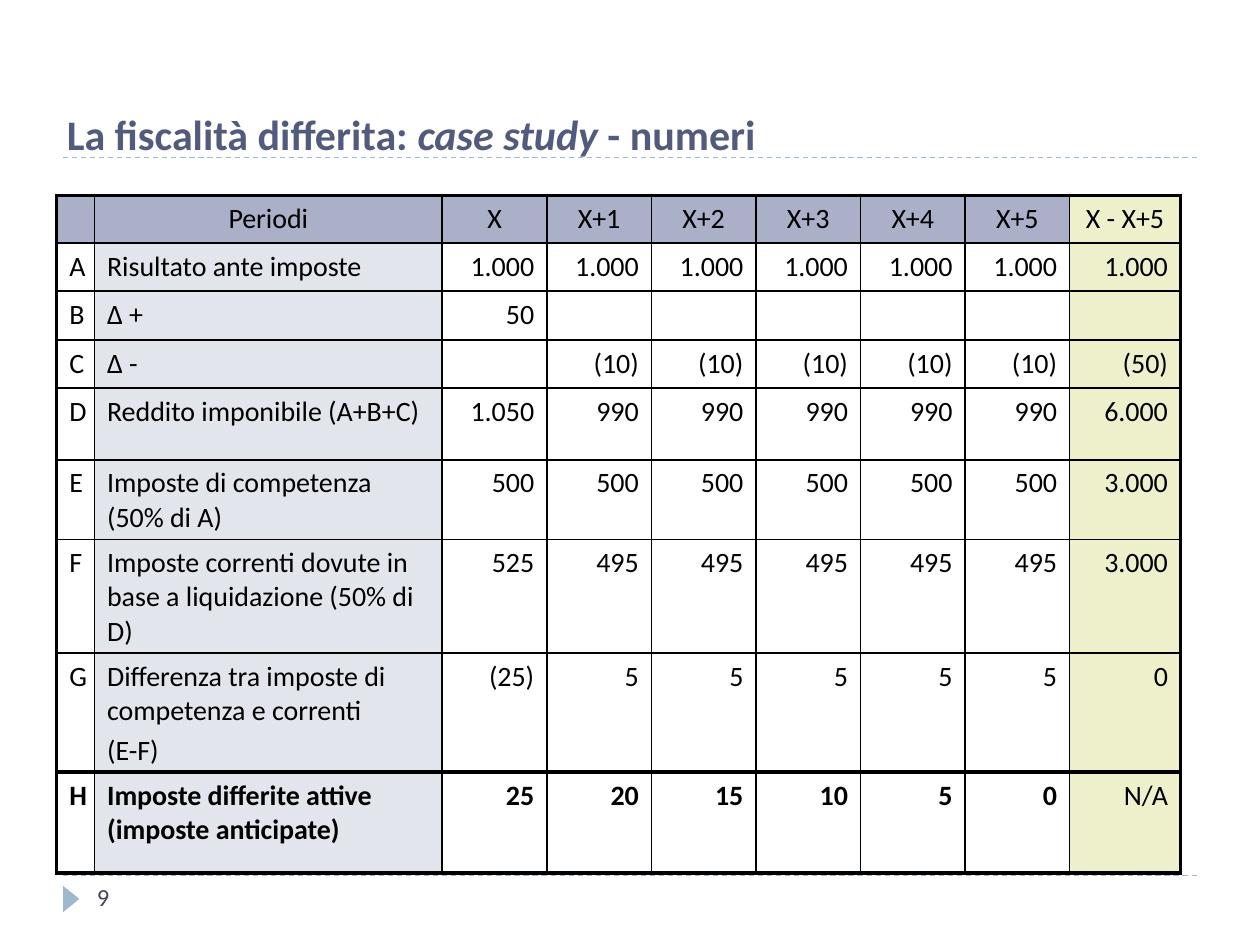
from dataclasses import dataclass
from lxml import etree
from pptx import Presentation
from pptx.dml.color import RGBColor
from pptx.enum.dml import MSO_LINE
from pptx.enum.shapes import MSO_CONNECTOR, MSO_SHAPE
from pptx.enum.text import MSO_ANCHOR, PP_ALIGN
from pptx.oxml import parse_xml
from pptx.oxml.ns import nsdecls, qn
from pptx.slide import Slide
from pptx.util import Inches, Pt

LEFT, CENTER, RIGHT = PP_ALIGN.LEFT, PP_ALIGN.CENTER, PP_ALIGN.RIGHT
TOP = MSO_ANCHOR.TOP
DASH = MSO_LINE.DASH
STRAIGHT = MSO_CONNECTOR.STRAIGHT
TRIANGLE = MSO_SHAPE.ISOSCELES_TRIANGLE
GRID_COLUMNS, GRID_ROWS = 100, 75

PERIODS = ["X"] + [f"X+{year}" for year in range(1, 6)]
ENTRIES = [
    ["", "Periodi", *PERIODS, "X - X+5"],
    ["A", "Risultato ante imposte", *["1.000"] * 7],
    ["B", "Δ +", "50", *[""] * 6],
    ["C", "Δ -", "", *["(10)"] * 5, "(50)"],
    ["D", "Reddito imponibile (A+B+C)", "1.050", *["990"] * 5, "6.000"],
    ["E", "Imposte di competenza (50% di A)", *["500"] * 6, "3.000"],
    ["F", "Imposte correnti dovute in base a liquidazione (50% di D)",
     "525", *["495"] * 5, "3.000"],
    ["G", "Differenza tra imposte di competenza e correnti\n(E-F)",
     "(25)", *["5"] * 5, "0"],
    ["H", "Imposte differite attive (imposte anticipate)",
     "25", "20", "15", "10", "5", "0", "N/A"],
]
COLUMN_WIDTHS = [3, 27.6, *[8.3] * 6, 8.8]
ROW_HEIGHTS = [3.8, 3.8, 3.9, 3.8, 5.7, 5.7, 8, 8.5, 8]


def color(hex_value):
    """Turn a hex string into a colour."""
    return RGBColor.from_string(hex_value)


def write_text(frame, paragraphs, *, font, size, ink, align=LEFT, bold=False, gap=0):
    """Fill a text frame with paragraphs, each a list of (text, italic) runs."""
    frame.word_wrap = True
    for index, runs in enumerate(paragraphs):
        paragraph = frame.add_paragraph() if index else frame.paragraphs[0]
        paragraph.alignment = align
        paragraph.space_before = Pt(gap if index else 0)
        for content, italic in runs:
            run = paragraph.add_run()
            run.text = content
            run.font.name, run.font.size = font, Pt(size)
            run.font.bold, run.font.italic = bold, italic
            run.font.color.rgb = color(ink)


def set_borders(cell, widths, ink):
    """Draw the left, right, top and bottom borders of a cell."""
    properties = cell._tc.get_or_add_tcPr()
    for side, width in zip("LRTB", widths):
        properties.append(parse_xml(
            f'<a:ln{side} {nsdecls("a")} w="{Pt(width)}"><a:solidFill>'
            f'<a:srgbClr val="{ink}"/></a:solidFill></a:ln{side}>'))


@dataclass
class Deck:
    """Hold the style and the current slide."""
    slide: Slide
    font: str = "Calibri"
    ink: str = "000000"
    title_ink: str = "525B7E"
    number_ink: str = "464653"
    accent: str = "9FB8CD"
    header_fill: str = "AAB0C8"
    label_fill: str = "E3E5ED"
    total_fill: str = "EDF0CA"
    thin: float = 1
    thick: float = 2.25

    def box(self, left, top, width, height):
        """Convert grid units to slide lengths."""
        column, row = Inches(10 / GRID_COLUMNS), Inches(7.5 / GRID_ROWS)
        return [round(n * unit) for n, unit in
                zip((left, top, width, height), (column, row, column, row))]

    def title(self, runs, *area):
        """Place and fill the title."""
        heading = self.slide.shapes.title
        heading.left, heading.top, heading.width, heading.height = self.box(*area)
        heading.text_frame.vertical_anchor = TOP
        write_text(heading.text_frame, [runs], font=self.font, size=24,
                   ink=self.title_ink, bold=True)

    def rule(self, left, right, row):
        """Draw a dashed horizontal rule."""
        x1, y, x2, _ = self.box(left, row, right, 0)
        rule = self.slide.shapes.add_connector(STRAIGHT, x1, y, x2, y)
        rule.line.color.rgb = color(self.accent)
        rule.line.width, rule.line.dash_style = Pt(0.75), DASH
        etree.SubElement(rule._element.spPr, qn("a:effectLst"))

    def marker(self, *area):
        """Draw a triangle that points right."""
        marker = self.slide.shapes.add_shape(TRIANGLE, *self.box(*area))
        marker.rotation = 90
        marker.shadow.inherit = False
        marker.fill.solid()
        marker.fill.fore_color.rgb = color(self.accent)
        marker.line.fill.background()

    def page_number(self, number, *area):
        """Write the page number."""
        frame = self.slide.shapes.add_textbox(*self.box(*area)).text_frame
        write_text(frame, [[(number, False)]], font=self.font, size=14,
                   ink=self.number_ink)

    def table(self, entries, left, top, widths, heights):
        """Build the table of periods and taxes."""
        area = self.box(left, top, sum(widths), sum(heights))
        grid = self.slide.shapes.add_table(len(heights), len(widths), *area).table
        grid.first_row = grid.horz_banding = False
        for column, width in zip(grid.columns, widths):
            column.width = self.box(0, 0, width, 0)[2]
        for row, height in zip(grid.rows, heights):
            row.height = self.box(0, 0, 0, height)[3]
        for r, entry in enumerate(entries):
            for c, content in enumerate(entry):
                self.cell(grid.cell(r, c), content, r, c, len(heights) - 1, len(widths) - 1)

    def cell(self, cell, content, r, c, last_row, last_column):
        """Write and format one table cell by its place."""
        heavy = (c == 0, c == last_column, r in (0, last_row), r >= last_row - 1)
        set_borders(cell, [self.thick if edge else self.thin for edge in heavy], self.ink)
        fill = (self.total_fill if c == last_column else self.header_fill if r == 0
                else self.label_fill if c == 1 else None)
        if fill:
            cell.fill.solid()
            cell.fill.fore_color.rgb = color(fill)
        else:
            cell.fill.background()
        if content:
            write_text(cell.text_frame, [[(line, False)] for line in content.split("\n")],
                       font=self.font, size=16, ink=self.ink, gap=3.2,
                       align=CENTER if r == 0 else RIGHT if c > 1 else LEFT,
                       bold=r == last_row and c < last_column)
        else:
            etree.SubElement(cell.text_frame.paragraphs[0]._p, qn("a:endParaRPr"), sz="1600")


def main():
    """Build and save the slide."""
    presentation = Presentation()
    presentation.slide_width, presentation.slide_height = Inches(10), Inches(7.5)
    deck = Deck(presentation.slides.add_slide(presentation.slide_layouts[5]))
    for row in (69.5, 12.5):
        deck.rule(5, 95, row)
    deck.marker(4.6, 70.7, 2.1, 1.3)
    deck.page_number("9", 6.7, 69.5, 21.7, 4)
    deck.table(ENTRIES, 4.5, 15.5, COLUMN_WIDTHS, ROW_HEIGHTS)
    deck.title([("La fiscalità differita: ", False), ("case study ", True),
                ("- numeri", False)], 4.3, 8.1, 89.1, 5)
    presentation.save("out.pptx")


if __name__ == "__main__":
    main()
